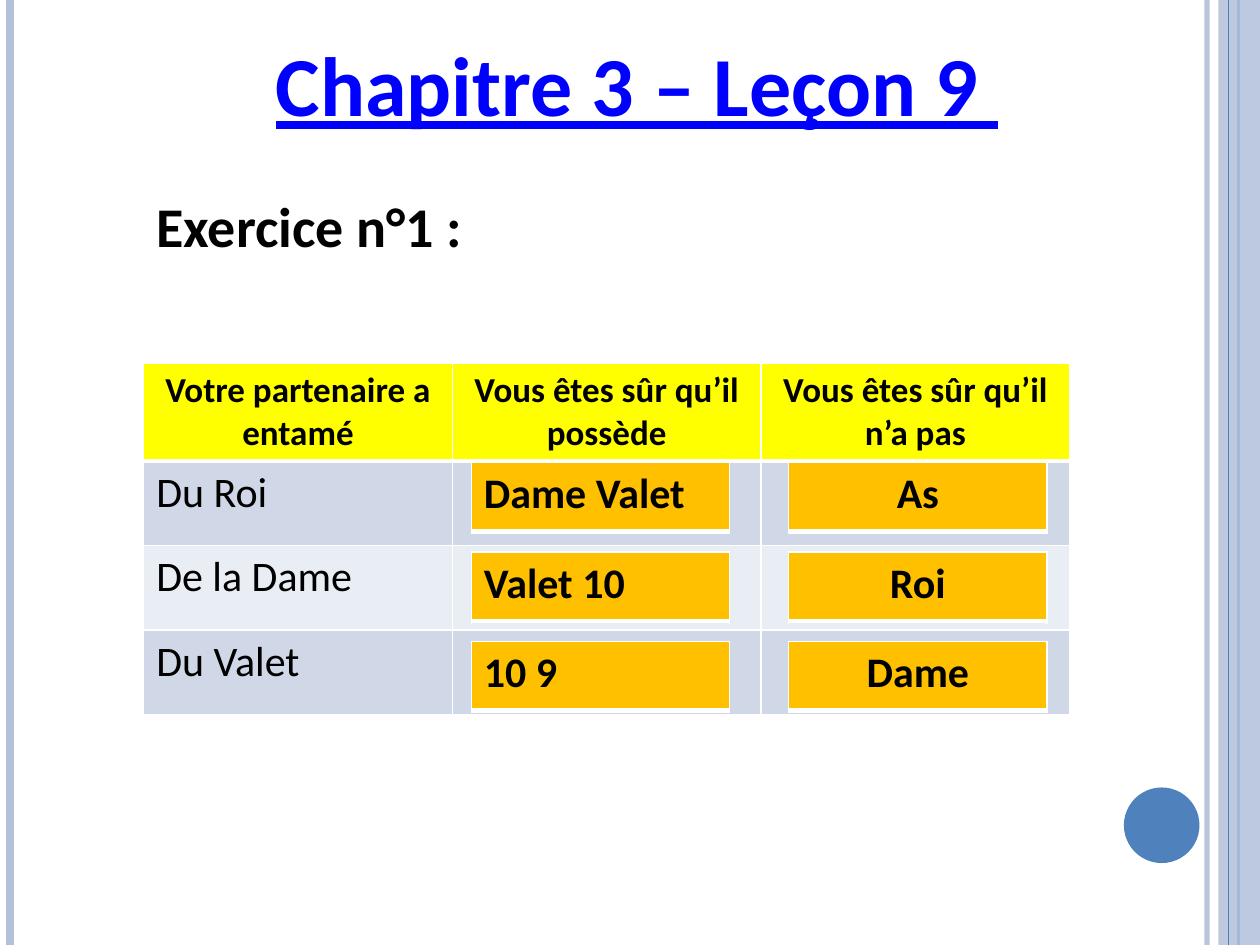
from dataclasses import dataclass
from typing import Any, NamedTuple

from lxml import etree
from pptx import Presentation
from pptx.dml.color import RGBColor
from pptx.enum.shapes import MSO_CONNECTOR, MSO_SHAPE
from pptx.enum.text import MSO_ANCHOR, MSO_AUTO_SIZE, PP_ALIGN
from pptx.oxml.ns import qn
from pptx.util import Inches, Pt

LEFT, CENTER = PP_ALIGN.LEFT, PP_ALIGN.CENTER
TOP = MSO_ANCHOR.TOP
FIT = MSO_AUTO_SIZE.SHAPE_TO_FIT_TEXT
LINE = MSO_CONNECTOR.STRAIGHT
RECT, OVAL = MSO_SHAPE.RECTANGLE, MSO_SHAPE.OVAL
WIDTH, HEIGHT = 10, 7.5


@dataclass(frozen=True)
class Theme:
    font: str = "Calibri"
    ink: str = "000000"
    title: str = "0000FF"
    white: str = "FFFFFF"
    pale: str = "B3C1DB"
    blue: str = "4F81BD"
    head: str = "FFFF00"
    odd: str = "D0D8E8"
    even: str = "E9EDF4"
    answer: str = "FFC000"
    title_size: int = 48
    task_size: int = 32
    head_size: int = 20
    cell_size: int = 24


class Box(NamedTuple):
    left: float
    top: float
    width: float
    height: float


class Rule(NamedTuple):
    x: float
    color: str
    width: float
    alpha: int = 100


class Style(NamedTuple):
    size: int
    color: str
    bold: bool = True
    line: bool = False
    align: Any = LEFT


THEME = Theme()
HEAD = Style(THEME.head_size, THEME.ink, align=CENTER)
PLAIN = Style(THEME.cell_size, THEME.ink, bold=False)
RULES = [
    Rule(9.58, THEME.pale, 3, 93),
    Rule(0.08, THEME.pale, 4.5),
    Rule(9.83, THEME.blue, 1.5),
]
EDGE = Rule(9.75, THEME.blue, 0.75)
HEADS = ["Votre partenaire a entamé", "Vous êtes sûr qu’il possède", "Vous êtes sûr qu’il n’a pas"]
LEADS = ["Du Roi", "De la Dame", "Du Valet"]
ANSWERS = [
    (3.74, LEFT, ["Dame Valet", "Valet 10", "10 9"]),
    (6.26, CENTER, ["As", "Roi", "Dame"]),
]


def rgb(color: str) -> RGBColor:
    return RGBColor.from_string(color)


def place(shape: Any, box: Box) -> None:
    for name, value in box._asdict().items():
        setattr(shape, name, Inches(value))


def fade(part: Any, alpha: int) -> None:
    if alpha < 100:
        color = next(part.iter(qn("a:srgbClr")))
        etree.SubElement(color, qn("a:alpha"), val=str(alpha * 1000))


def write(frame: Any, text: str, style: Style) -> None:
    para = frame.paragraphs[0]
    para.alignment = style.align
    run = para.add_run()
    run.text = text
    looks = {"name": THEME.font, "size": Pt(style.size), "bold": style.bold, "underline": style.line}
    for name, value in looks.items():
        setattr(run.font, name, value)
    run.font.color.rgb = rgb(style.color)


def fill_holder(shape: Any, box: Box, text: str, style: Style) -> None:
    place(shape, box)
    frame = shape.text_frame
    looks = {"word_wrap": True, "auto_size": FIT, "vertical_anchor": TOP}
    for name, value in looks.items():
        setattr(frame, name, value)
    write(frame, text, style)
    para = frame.paragraphs[0]
    para.space_before = Pt(0)
    props = para._p.get_or_add_pPr()
    for name in ("marL", "indent"):
        props.set(name, "0")
    etree.SubElement(props, qn("a:buNone"))


def draw_rule(slide: Any, rule: Rule) -> None:
    x = Inches(rule.x)
    link = slide.shapes.add_connector(LINE, x, Inches(0), x, Inches(HEIGHT))
    link.line.color.rgb = rgb(rule.color)
    link.line.width = Pt(rule.width)
    props = link._element.spPr
    fade(props, rule.alpha)
    etree.SubElement(props, qn("a:effectLst"))


def draw_shape(slide: Any, kind: Any, box: Box, color: str, alpha: int = 100) -> None:
    shape = slide.shapes.add_shape(kind, *map(Inches, box))
    shape.shadow.inherit = False
    shape.line.fill.background()
    shape.fill.solid()
    shape.fill.fore_color.rgb = rgb(color)
    fade(shape._element.spPr, alpha)


def paint(cell: Any, color: str, widths: dict[str, int]) -> None:
    props = cell._tc.get_or_add_tcPr()
    for side, width in widths.items():
        edge = etree.SubElement(props, qn(f"a:ln{side}"), w=str(Pt(width)))
        solid = etree.SubElement(edge, qn("a:solidFill"))
        etree.SubElement(solid, qn("a:srgbClr"), val=THEME.white)
    cell.fill.solid()
    cell.fill.fore_color.rgb = rgb(color)


def add_grid(slide: Any, box: Box, rows: int, cols: int) -> Any:
    grid = slide.shapes.add_table(rows, cols, *map(Inches, box)).table
    grid.first_row = grid.horz_banding = False
    return grid


def draw_main(slide: Any) -> None:
    grid = add_grid(slide, Box(1.14, 2.88, 7.35, 2.79), 4, 3)
    for row, high in zip(grid.rows, [0.78] + [0.67] * 3):
        row.height = Inches(high)
    colors = [THEME.head, THEME.odd, THEME.even, THEME.odd]
    for r, color in enumerate(colors):
        widths = {"L": 1, "R": 1, "T": 3 if r == 1 else 1, "B": 3 if r == 0 else 1}
        for c in range(3):
            paint(grid.cell(r, c), color, widths)
    for c, text in enumerate(HEADS):
        write(grid.cell(0, c).text_frame, text, HEAD)
    for r, text in enumerate(LEADS, 1):
        write(grid.cell(r, 0).text_frame, text, PLAIN)


def draw_answer(slide: Any, left: float, top: float, text: str, align: Any) -> None:
    cell = add_grid(slide, Box(left, top, 2.05, 0.55), 1, 1).cell(0, 0)
    paint(cell, THEME.answer, {"L": 1, "R": 1, "T": 1, "B": 3})
    write(cell.text_frame, text, Style(THEME.cell_size, THEME.ink, align=align))


def main() -> None:
    deck = Presentation()
    deck.slide_width, deck.slide_height = Inches(WIDTH), Inches(HEIGHT)
    slide = deck.slides.add_slide(deck.slide_layouts[1])
    for rule in RULES:
        draw_rule(slide, rule)
    draw_shape(slide, RECT, Box(9.67, 0, 0.33, HEIGHT), THEME.pale, 87)
    draw_rule(slide, EDGE)
    draw_shape(slide, OVAL, Box(8.92, 6.25, 0.6, 0.6), THEME.blue)
    title, task = slide.placeholders
    fill_holder(title, Box(2.09, 0.21, 7.48, 0.91), "Chapitre 3 – Leçon 9 ",
                Style(THEME.title_size, THEME.title, line=True))
    fill_holder(task, Box(1.14, 1.47, 7.01, 0.64), "Exercice n°1 :",
                Style(THEME.task_size, THEME.ink))
    draw_main(slide)
    for left, align, texts in ANSWERS:
        for i, text in enumerate(texts):
            draw_answer(slide, left, 3.67 + 0.71 * i, text, align)
    deck.save("out.pptx")


if __name__ == "__main__":
    main()
